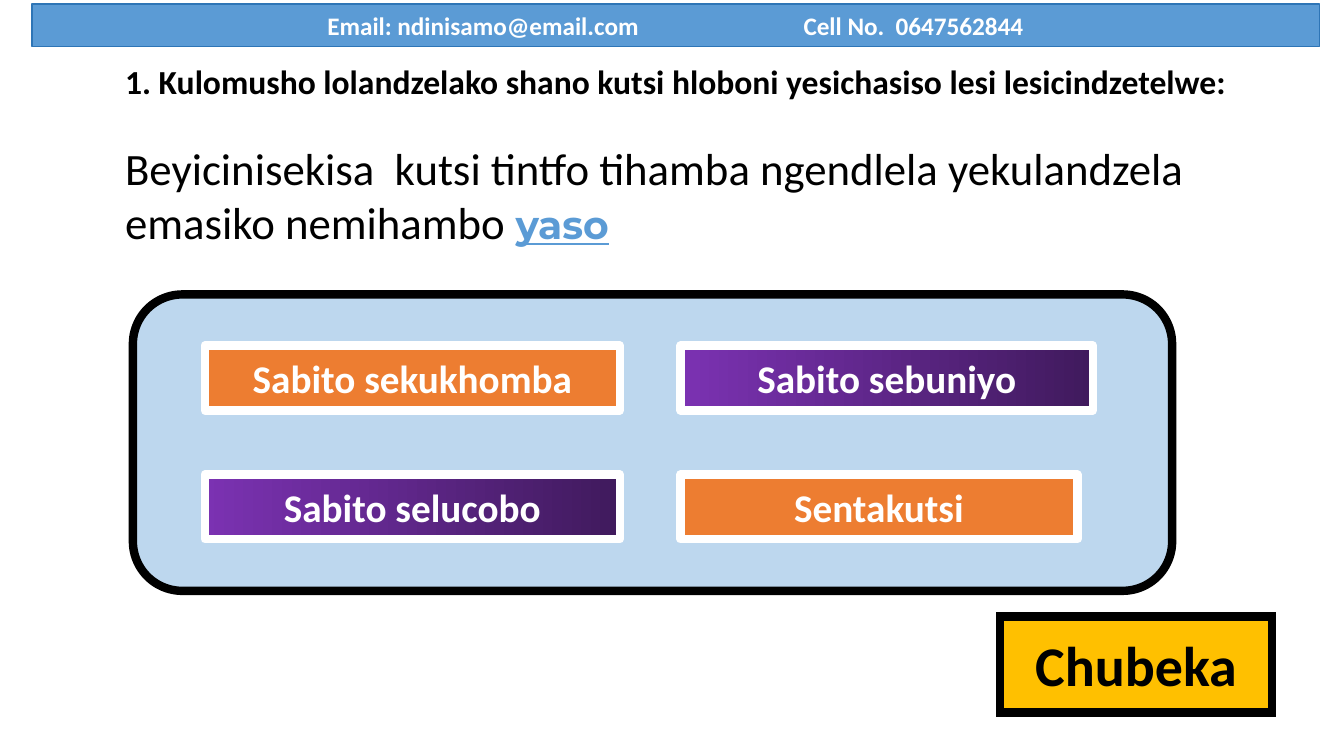
from lxml.etree import SubElement
from pptx import Presentation
from pptx.dml.color import RGBColor
from pptx.enum.shapes import MSO_SHAPE as Shape
from pptx.enum.text import MSO_ANCHOR as Anchor, MSO_AUTO_SIZE as AutoSize, PP_ALIGN as Align
from pptx.oxml.ns import qn
from pptx.util import Cm, Pt

BLACK, WHITE = "000000", "FFFFFF"
BLUE, ORANGE, AMBER = "5B9BD5", "ED7D31", "FFC000"
PURPLES = ("7B32B2", "401A5D")


def rgb(color):
    return RGBColor.from_string(color)


def write(paragraph, text, size, color=BLACK, font="Calibri", bold=True,
          underline=None, align=Align.LEFT):
    paragraph.alignment = align
    run = paragraph.add_run()
    run.text = text
    run.font.name, run.font.size = font, Pt(size)
    run.font.bold, run.font.underline = bold, underline
    run.font.color.rgb = rgb(color)


def add_block(slide, kind, box, fill, line, line_width):
    """Add an outlined shape; a pair of fill colours makes a left-to-right gradient."""
    block = slide.shapes.add_shape(kind, *map(Cm, box))
    block.shadow.inherit = False
    if isinstance(fill, tuple):
        block.fill.gradient()
        block.fill.gradient_angle = 0
        for stop, color in zip(block.fill.gradient_stops, fill):
            stop.color.rgb = rgb(color)
    else:
        block.fill.solid()
        block.fill.fore_color.rgb = rgb(fill)
    block.line.color.rgb = rgb(line)
    block.line.width = Pt(line_width)
    block.text_frame.vertical_anchor = Anchor.MIDDLE
    return block


def add_button(slide, box, label, fill, line=WHITE, size=28, color=WHITE):
    button = add_block(slide, Shape.ACTION_BUTTON_CUSTOM, box, fill, line, 6)
    write(button.text_frame.paragraphs[0], label, size, color, align=Align.CENTER)
    return button


def place_placeholder(placeholder, box):
    """Move a placeholder and return its first paragraph, set flush left at the top."""
    placeholder.left, placeholder.top, placeholder.width, placeholder.height = map(Cm, box)
    frame = placeholder.text_frame
    frame.word_wrap, frame.auto_size = True, AutoSize.NONE
    frame.vertical_anchor = Anchor.TOP
    paragraph = frame.paragraphs[0]
    paragraph.space_before = Pt(0)
    properties = paragraph._p.get_or_add_pPr()
    properties.set("marL", "0")
    properties.set("indent", "0")
    SubElement(properties, qn("a:buNone"))
    return paragraph


def add_question(slide, box):
    left, top, width, height = box
    instruction = place_placeholder(slide.shapes.title, (left, top, width, 1.3))
    write(instruction, "1. Kulomusho lolandzelako shano kutsi hloboni yesichasiso "
          "lesi lesicindzetelwe:", 24)
    sentence = place_placeholder(slide.placeholders[1], (left, top + 2.03, width, height - 2.03))
    write(sentence, "Beyicinisekisa  kutsi tintfo tihamba ngendlela yekulandzela "
          "emasiko nemihambo ", 32, bold=False)
    write(sentence, "yaso", 28, BLUE, font="Montserrat", underline=True)


def add_answers(slide, box):
    left, top, _, _ = box
    add_block(slide, Shape.ROUNDED_RECTANGLE, box, "BDD7EE", BLACK, 6)
    answers = [
        ("Sabito sekukhomba", ORANGE, 10.46),
        ("Sabito sebuniyo", PURPLES, 10.39),
        ("Sabito selucobo", PURPLES, 10.46),
        ("Sentakutsi", ORANGE, 10),
    ]
    for index, (label, fill, width) in enumerate(answers):
        row, column = divmod(index, 2)
        place = (left + 1.81 + 11.99 * column, top + 1.29 + 3.25 * row, width, 1.63)
        add_button(slide, place, label, fill)


def add_next_button(slide, box):
    button = add_button(slide, box, "Chubeka", AMBER, BLACK, 40, BLACK)
    SubElement(button._element.spPr.find(qn("a:ln")), qn("a:miter"), lim="800000")


def add_contact_bar(slide, box):
    """Draw the bar with the e-mail at its left inset and the phone number at a tab stop."""
    bar = add_block(slide, Shape.RECTANGLE, box, BLUE, "2E75B6", 1)
    bar.text_frame.margin_left = Cm(7.44)
    contacts = bar.text_frame.paragraphs[0]
    write(contacts, "Email: ndinisamo@email.com\tCell No.  0647562844", 18, WHITE)
    tabs = SubElement(contacts._p.get_or_add_pPr(), qn("a:tabLst"))
    SubElement(tabs, qn("a:tab"), pos=str(Cm(12)), algn="l")


def main():
    deck = Presentation()
    deck.slide_width, deck.slide_height = Cm(33.87), Cm(19.05)
    slide = deck.slides.add_slide(deck.slide_layouts[1])
    add_question(slide, (2.9, 1.4, 29.67, 5.03))
    add_answers(slide, (3.35, 7.42, 26.19, 7.47))
    add_next_button(slide, (25.2, 15.54, 6.86, 2.41))
    add_contact_bar(slide, (0.81, 0.1, 32.44, 1.07))
    deck.save("out.pptx")


if __name__ == "__main__":
    main()
